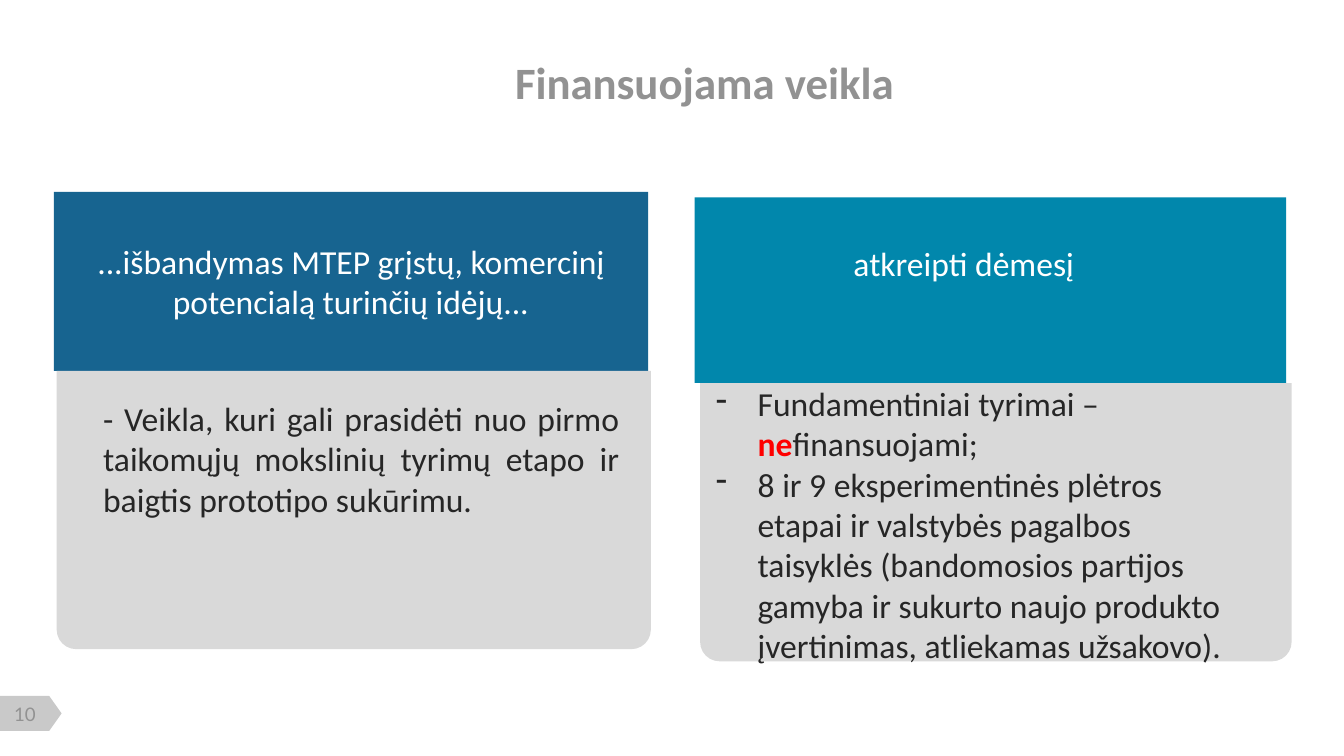
from dataclasses import dataclass

from lxml.etree import SubElement
from pptx import Presentation
from pptx.dml.color import RGBColor
from pptx.enum.shapes import MSO_SHAPE
from pptx.enum.text import MSO_ANCHOR, PP_ALIGN
from pptx.oxml.ns import qn
from pptx.util import Cm, Pt

WHITE = RGBColor(0xFF, 0xFF, 0xFF)
BLUE = RGBColor(0x17, 0x64, 0x90)
TEAL = RGBColor(0x01, 0x87, 0xAC)
PALE = RGBColor(0xD9, 0xD9, 0xD9)
SILVER = RGBColor(0xC9, 0xC9, 0xC9)
GREY = RGBColor(0x92, 0x92, 0x92)
DARK = RGBColor(0x26, 0x26, 0x26)
RED = RGBColor(0xFF, 0x00, 0x00)


@dataclass
class Box:
    left: float
    top: float
    width: float
    height: float

    def place(self) -> tuple:
        return Cm(self.left), Cm(self.top), Cm(self.width), Cm(self.height)


@dataclass
class Style:
    size: float = 18
    color: RGBColor = DARK
    align: PP_ALIGN = PP_ALIGN.LEFT
    anchor: MSO_ANCHOR = MSO_ANCHOR.TOP
    font: str = "Calibri"
    bold: bool = False
    inset: tuple = (0.25, 0.13, 0.25, 0.13)


@dataclass
class Panel:
    head: Box
    fill: RGBColor
    body: Box
    note: Box


def draw_shape(shapes, kind: MSO_SHAPE, box: Box, fill: RGBColor, turn: float = 0):
    shape = shapes.add_shape(kind, *box.place())
    shape.shadow.inherit = False
    shape.fill.solid()
    shape.fill.fore_color.rgb = fill
    shape.line.fill.background()
    shape.rotation = turn
    return shape


def set_text(shape, text: str, style: Style) -> None:
    frame = shape.text_frame
    frame.text = text
    frame.word_wrap = True
    frame.vertical_anchor = style.anchor
    sides = [Cm(side) for side in style.inset]
    frame.margin_left, frame.margin_top, frame.margin_right, frame.margin_bottom = sides
    for para in frame.paragraphs:
        para.alignment = style.align
        for run in para.runs:
            run.font.name = style.font
            run.font.size = Pt(style.size)
            run.font.bold = style.bold
            run.font.color.rgb = style.color


def draw_text(shapes, box: Box, text: str, style: Style):
    shape = shapes.add_textbox(*box.place())
    set_text(shape, text, style)
    return shape


def draw_panel(shapes, panel: Panel, text: str, style: Style) -> tuple:
    head = draw_shape(shapes, MSO_SHAPE.RECTANGLE, panel.head, panel.fill)
    group = shapes.add_group_shape()
    body = draw_shape(group.shapes, MSO_SHAPE.ROUND_2_SAME_RECTANGLE, panel.body, PALE, 180)
    body.adjustments[0] = 0.07
    body.adjustments[1] = 0
    return head, draw_text(group.shapes, panel.note, text, style)


def add_dash(para) -> None:
    props = para._p.get_or_add_pPr()
    props.set("marL", str(Cm(0.79)))
    props.set("indent", str(-Cm(0.79)))
    SubElement(props, qn("a:buChar")).set("char", "-")


def mark_part(para, part: str) -> None:
    start, end = para.text.split(part, 1)
    first = para.runs[0]
    first.text = start
    for text in (part, end):
        run = para.add_run()
        run.text = text
        run.font.name = first.font.name
        run.font.size = first.font.size
        run.font.bold = text == part
        run.font.color.rgb = RED if text == part else DARK


def main() -> None:
    deck = Presentation()
    deck.slide_width, deck.slide_height = Cm(25.4), Cm(14.29)
    shapes = deck.slides.add_slide(deck.slide_layouts[6]).shapes
    center, middle = PP_ALIGN.CENTER, MSO_ANCHOR.MIDDLE

    draw_shape(shapes, MSO_SHAPE.FLOWCHART_OFFPAGE_CONNECTOR,
               Box(0.25, 12.9, 0.66, 1.17), SILVER, 270)
    draw_text(shapes, Box(0.05, 13.28, 0.84, 0.43), "10",
              Style(10, GREY, center, middle, "Lato", inset=(0, 0, 0, 0)))
    draw_text(shapes, Box(3.38, 1.04, 20.12, 0.99), "Finansuojama veikla",
              Style(24, GREY, center, middle, bold=True, inset=(0, 0.13, 0.25, 0.13)))

    left = Panel(Box(1.02, 3.63, 11.23, 3.38), BLUE,
                 Box(1.07, 7.01, 11.23, 5.26), Box(1.7, 7.39, 10.26, 3.33))
    right = Panel(Box(13.13, 3.73, 11.18, 3.51), TEAL,
                  Box(13.23, 7.24, 11.18, 5.26), Box(13.28, 7.11, 10.64, 5.64))

    head, _ = draw_panel(
        shapes, left,
        "- Veikla, kuri gali prasidėti nuo pirmo taikomųjų mokslinių tyrimų "
        "etapo ir baigtis prototipo sukūrimu.",
        Style(align=PP_ALIGN.JUSTIFY))
    set_text(head, "...išbandymas MTEP grįstų, komercinį potencialą turinčių idėjų...",
             Style(color=WHITE, align=center, anchor=middle))

    _, note = draw_panel(
        shapes, right,
        "Fundamentiniai tyrimai – nefinansuojami;\n"
        "8 ir 9 eksperimentinės plėtros etapai ir valstybės pagalbos taisyklės "
        "(bandomosios partijos gamyba ir sukurto naujo produkto įvertinimas, "
        "atliekamas užsakovo).",
        Style())
    for para in note.text_frame.paragraphs:
        add_dash(para)
    mark_part(note.text_frame.paragraphs[0], "ne")
    draw_text(shapes, Box(15.04, 4.47, 6.35, 1.02), "atkreipti dėmesį",
              Style(color=WHITE, align=center))

    deck.save("out.pptx")


if __name__ == "__main__":
    main()
